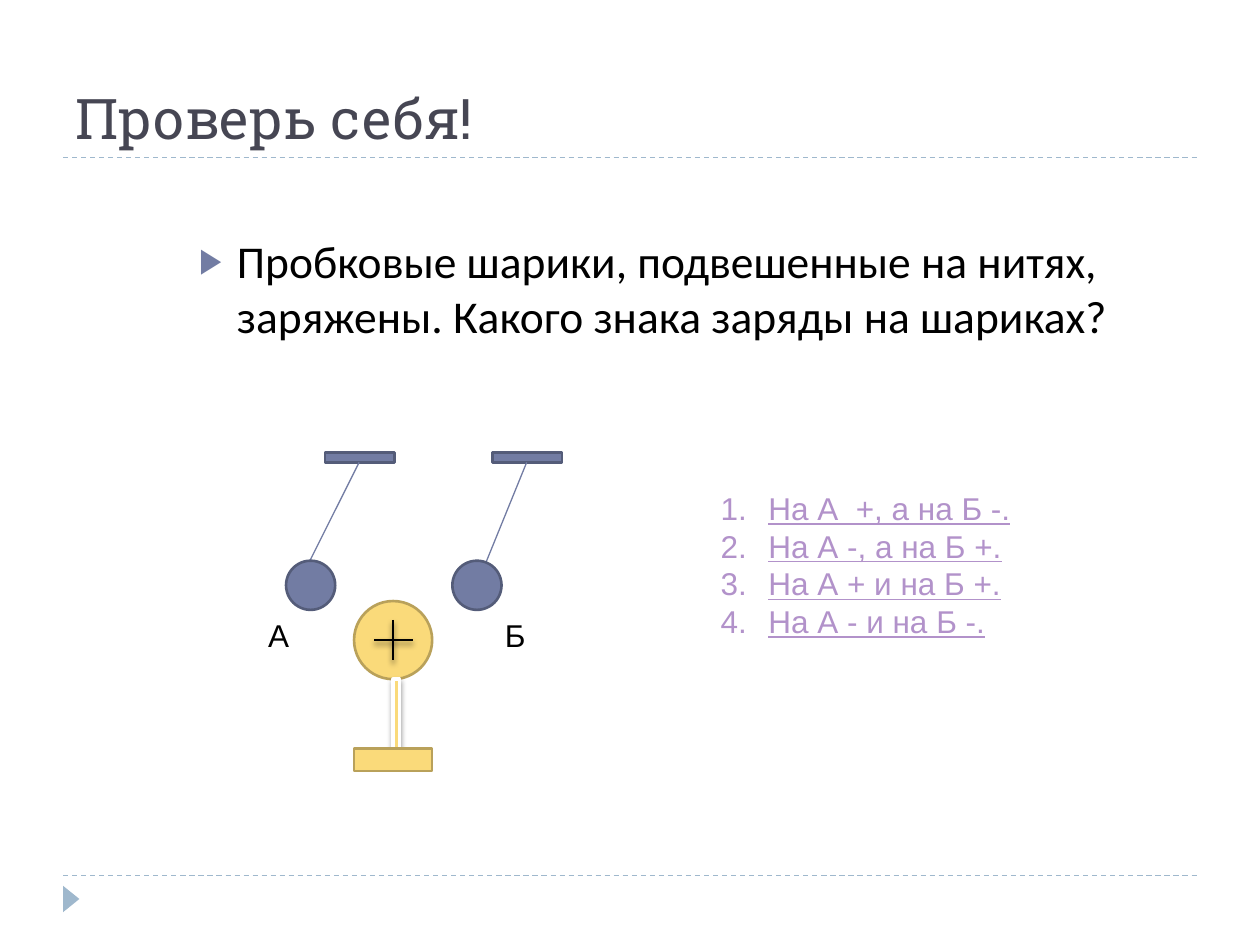
from lxml import etree
from pptx import Presentation
from pptx import util as u
from pptx.dml.color import RGBColor
from pptx.enum import dml, shapes, text
from pptx.oxml import ns

PX = 9144  # EMU per px, 100 px to the inch

BLACK = RGBColor(0x00, 0x00, 0x00)
WHITE = RGBColor(0xFF, 0xFF, 0xFF)
TITLE = RGBColor(0x46, 0x46, 0x53)
RULE = RGBColor(0x9F, 0xB8, 0xCD)
BLUE = RGBColor(0x72, 0x7C, 0xA3)
BLUE_EDGE = RGBColor(0x54, 0x5C, 0x79)
YELLOW = RGBColor(0xFA, 0xDA, 0x7A)
YELLOW_EDGE = RGBColor(0xB9, 0xA1, 0x5A)
ANSWER = RGBColor(0xB2, 0x92, 0xCA)

RECT = shapes.MSO_SHAPE.RECTANGLE
OVAL = shapes.MSO_SHAPE.OVAL
TRIANGLE = shapes.MSO_SHAPE.ISOSCELES_TRIANGLE


def add_xml(parent, tag, **attributes):
    return etree.SubElement(parent, ns.qn(tag), attributes)


class SlideBuilder:
    label_font = "Arial"
    label_size = 18

    def __init__(self, slide):
        self.slide = slide

    def place(self, shape, left, top, width, height):
        shape.left, shape.top = left * PX, top * PX
        shape.width, shape.height = width * PX, height * PX

    def format(self, paragraph, font, size, color, underline=None):
        for run in paragraph.runs:
            run.font.name = font
            run.font.size = u.Pt(size)
            run.font.color.rgb = color
            run.font.underline = underline

    def hang(self, paragraph, indent):
        properties = paragraph._p.get_or_add_pPr()
        properties.set("marL", str(indent * PX))
        properties.set("indent", str(-indent * PX))
        return properties

    def drop_shadow(self, effects):
        shadow = add_xml(effects, "a:outerShdw", blurRad="38100", dist="25400",
                         dir="5400000", rotWithShape="0")
        color = add_xml(shadow, "a:srgbClr", val="000000")
        add_xml(color, "a:alpha", val="40000")

    def title(self, wording, *box):
        shape = self.slide.shapes.title
        self.place(shape, *box)
        frame = shape.text_frame
        frame.text = wording
        frame.vertical_anchor = text.MSO_ANCHOR.BOTTOM
        frame.paragraphs[0].alignment = text.PP_ALIGN.LEFT
        self.format(frame.paragraphs[0], "Roboto Slab", 32, TITLE)

    def body(self, wording, *box):
        shape = self.slide.placeholders[1]
        self.place(shape, *box)
        shape.text_frame.text = wording
        paragraph = shape.text_frame.paragraphs[0]
        paragraph.space_before = u.Pt(6)
        self.format(paragraph, "Calibri", 26, BLACK)
        properties = self.hang(paragraph, 30)
        add_xml(add_xml(properties, "a:buClr"), "a:srgbClr", val=str(BLUE))
        add_xml(properties, "a:buSzPct", val="76000")
        add_xml(properties, "a:buFont", typeface="Arial")
        add_xml(properties, "a:buChar", char="▶")

    def shape(self, kind, box, fill, edge=None, width=1.5, shadow=False):
        shape = self.slide.shapes.add_shape(kind, *(n * PX for n in box))
        shape.shadow.inherit = False
        shape.fill.solid()
        shape.fill.fore_color.rgb = fill
        if edge is None:
            shape.line.fill.background()
        else:
            shape.line.color.rgb = edge
            shape.line.width = u.Pt(width)
        if shadow:
            self.drop_shadow(shape._element.spPr.find(ns.qn("a:effectLst")))
        return shape

    def line(self, start, end, color, width=0.75, dashed=False, shadow=False):
        points = [n * PX for n in (*start, *end)]
        line = self.slide.shapes.add_connector(shapes.MSO_CONNECTOR.STRAIGHT, *points)
        line.line.color.rgb = color
        line.line.width = u.Pt(width)
        if dashed:
            line.line.dash_style = dml.MSO_LINE.DASH
        effects = add_xml(line._element.spPr, "a:effectLst")
        if shadow:
            self.drop_shadow(effects)

    def label(self, wording, *box, wrap=True, color=BLACK, underline=None):
        shape = self.slide.shapes.add_textbox(*(n * PX for n in box))
        frame = shape.text_frame
        frame.text = wording
        frame.word_wrap = wrap
        for paragraph in frame.paragraphs:
            self.format(paragraph, self.label_font, self.label_size, color, underline)
        return frame

    def numbered_list(self, items, *box):
        frame = self.label("\n".join(items), *box, wrap=False,
                           color=ANSWER, underline=True)
        for paragraph in frame.paragraphs:
            properties = self.hang(paragraph, 38)
            add_xml(properties, "a:buFont", typeface="+mj-lt")
            add_xml(properties, "a:buAutoNum", type="arabicPeriod")


def main():
    presentation = Presentation()
    presentation.slide_width, presentation.slide_height = 1000 * PX, 750 * PX
    slide = presentation.slides.add_slide(presentation.slide_layouts[1])
    builder = SlideBuilder(slide)

    # Page frame
    for y in (695, 125):
        builder.line((50, y), (950, y), RULE, dashed=True)
    builder.shape(TRIANGLE, (46, 707, 21, 13), RULE).rotation = 90

    # Title and question
    builder.title("Проверь себя!", 50, 17, 900, 108)
    builder.body("Пробковые шарики, подвешенные на нитях, заряжены. "
                 "Какого знака заряды на шариках?", 148, 180, 820, 525)

    # Hanging balls: support, thread and ball
    for support, thread_end, ball in ((258, 242, 227), (391, 383, 359)):
        builder.shape(RECT, (support, 359, 55, 8), BLUE, BLUE_EDGE)
        builder.line((support + 27, 367), (thread_end, 453), BLUE)
        builder.shape(OVAL, (ball, 445, 39, 39), BLUE, BLUE_EDGE)

    # Charged sphere on its stand
    builder.shape(OVAL, (281, 477, 62, 62), YELLOW, YELLOW_EDGE)
    builder.shape(RECT, (312, 539, 5, 62), YELLOW, WHITE, 2, shadow=True)
    builder.shape(RECT, (281, 594, 62, 18), YELLOW, YELLOW_EDGE)

    # Plus sign
    for start, end in (((312, 492), (312, 524)), ((297, 508), (328, 508))):
        builder.line(start, end, BLACK, 1.5, shadow=True)

    # Ball labels and answers
    builder.label("А", 203, 484, 45, 40)
    builder.label("Б", 391, 484, 37, 40)
    builder.numbered_list(("На А  +, а на Б -.", "На А -, а на Б +.",
                           "На А + и на Б +.", "На А - и на Б -."),
                          562, 383, 252, 131)

    presentation.save("out.pptx")


if __name__ == "__main__":
    main()
